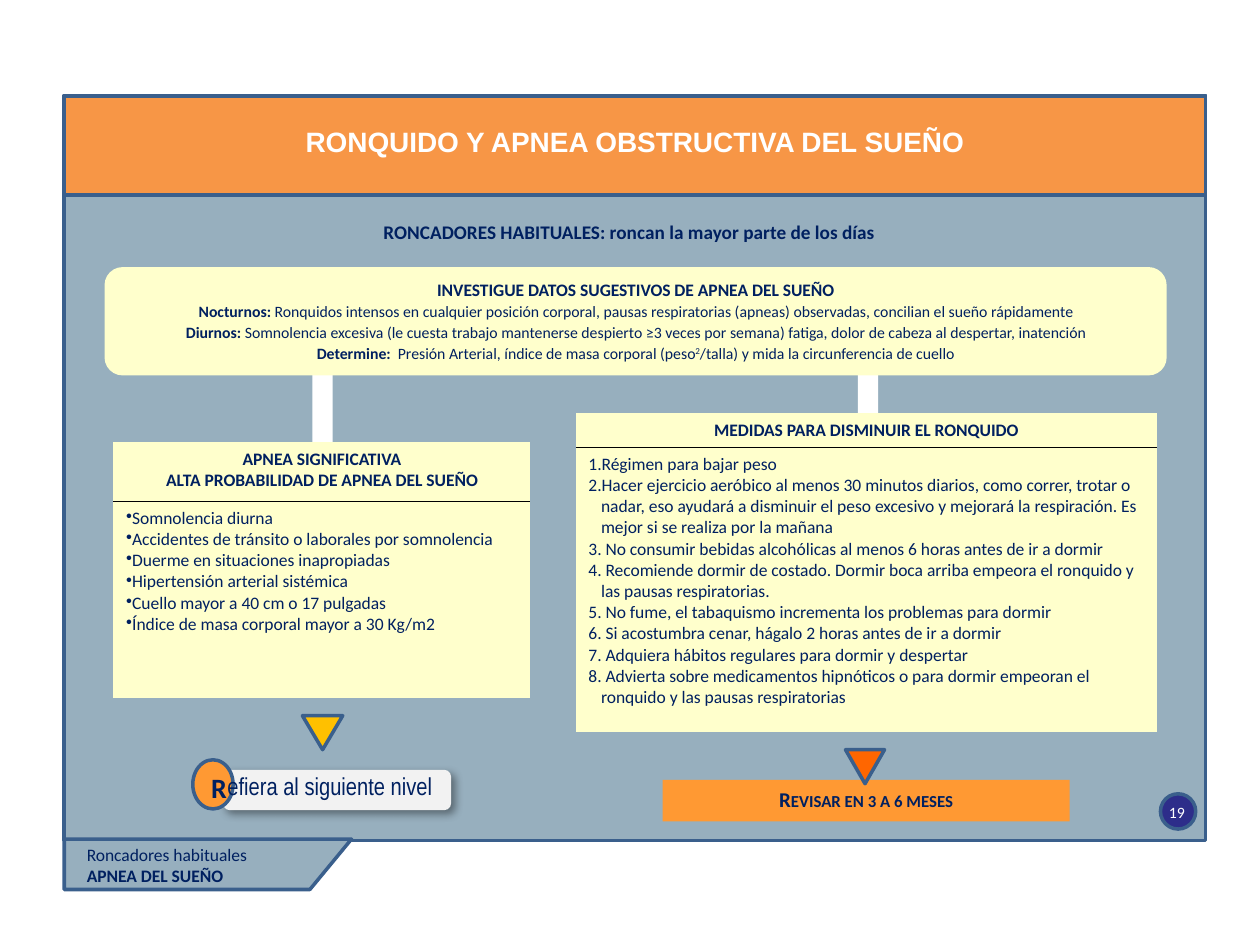
from lxml import etree
from pptx import Presentation
from pptx.dml.color import RGBColor
from pptx.enum.shapes import MSO_SHAPE
from pptx.enum.text import MSO_ANCHOR, PP_ALIGN
from pptx.oxml import parse_xml
from pptx.oxml.ns import nsdecls, qn
from pptx.util import Inches, Pt

RECTANGLE = MSO_SHAPE.RECTANGLE
ROUNDED = MSO_SHAPE.ROUNDED_RECTANGLE
OVAL = MSO_SHAPE.OVAL
TRIANGLE = MSO_SHAPE.ISOSCELES_TRIANGLE
LEFT, CENTER, RIGHT = PP_ALIGN.LEFT, PP_ALIGN.CENTER, PP_ALIGN.RIGHT
TOP, MIDDLE = MSO_ANCHOR.TOP, MSO_ANCHOR.MIDDLE

NAVY = RGBColor(0x00, 0x20, 0x60)
OUTLINE = RGBColor(0x3A, 0x5F, 0x8C)
SLATE = RGBColor(0x97, 0xAF, 0xBE)
BADGE_BLUE = RGBColor(0x2D, 0x2D, 0x8A)
TITLE_ORANGE = RGBColor(0xF7, 0x96, 0x46)
ORANGE = RGBColor(0xFF, 0x99, 0x33)
DEEP_ORANGE = RGBColor(0xFF, 0x66, 0x00)
AMBER = RGBColor(0xFF, 0xC0, 0x00)
CREAM = RGBColor(0xFF, 0xFF, 0xCC)
PALE_GRAY = RGBColor(0xF2, 0xF2, 0xF2)
WHITE = RGBColor(0xFF, 0xFF, 0xFF)

PLAIN_TABLE_STYLE = "{2D5ABB26-0587-4C30-8999-92F81FD0307C}"

SIGNS = [
    "Somnolencia diurna",
    "Accidentes de tránsito o laborales por somnolencia",
    "Duerme en situaciones inapropiadas",
    "Hipertensión arterial sistémica",
    "Cuello mayor a 40 cm o 17 pulgadas",
    "Índice de masa corporal mayor a 30 Kg/m2",
]
MEASURES = [
    "Régimen para bajar peso",
    "Hacer ejercicio aeróbico al menos 30 minutos diarios, como correr, trotar o "
    "nadar, eso ayudará a disminuir el peso excesivo y mejorará la respiración. "
    "Es mejor si se realiza por la mañana",
    " No consumir bebidas alcohólicas al menos 6 horas antes de ir a dormir",
    " Recomiende dormir de costado. Dormir boca arriba empeora el ronquido y las "
    "pausas respiratorias.",
    " No fume, el tabaquismo incrementa los problemas para dormir",
    " Si acostumbra cenar, hágalo 2 horas antes de ir a dormir",
    " Adquiera hábitos regulares para dormir y despertar",
    " Advierta sobre medicamentos hipnóticos o para dormir empeoran el ronquido y "
    "las pausas respiratorias",
]
FINDINGS = [
    ("Nocturnos:", [" Ronquidos intensos en cualquier posición corporal, pausas "
                    "respiratorias (apneas) observadas, concilian el sueño rápidamente"]),
    ("Diurnos:", [" Somnolencia excesiva (le cuesta trabajo mantenerse despierto ≥3 "
                  "veces por semana) fatiga, dolor de cabeza al despertar, inatención"]),
    ("Determine: ", [" Presión Arterial, índice de masa corporal (peso", "2",
                     "/talla) y mida la circunferencia de cuello"]),
]


def style_outline(shape, fill, outlined):
    shape.shadow.inherit = False
    shape.fill.solid()
    shape.fill.fore_color.rgb = fill
    if outlined:
        shape.line.color.rgb = OUTLINE
        shape.line.width = Pt(2)
    else:
        shape.line.fill.background()


def add_box(slide, kind, box, fill, outlined=False):
    shape = slide.shapes.add_shape(kind, *map(Inches, box))
    style_outline(shape, fill, outlined)
    return shape


def format_paragraph(paragraph, size, bold=False, align=LEFT, color=NAVY, font="Calibri"):
    paragraph.alignment = align
    paragraph.font.name = font
    paragraph.font.size = Pt(size)
    paragraph.font.bold = bold
    paragraph.font.color.rgb = color


def write_lines(frame, lines, size, anchor=TOP, **style):
    frame.vertical_anchor = anchor
    frame.text = "\n".join(lines)
    for paragraph in frame.paragraphs:
        format_paragraph(paragraph, size, **style)


def add_text(slide, box, lines, size, wrap=True, **style):
    frame = slide.shapes.add_textbox(*map(Inches, box)).text_frame
    frame.word_wrap = wrap
    write_lines(frame, lines, size, **style)
    return frame


def set_small_caps(frame):
    for run in frame.paragraphs[0].runs:
        run.font._element.set("cap", "small")


def add_soft_shadow(shape):
    effects = shape._element.spPr.find(qn("a:effectLst"))
    effects.append(parse_xml(
        f'<a:outerShdw {nsdecls("a")} blurRad="63500" dist="38100" dir="2700000">'
        '<a:srgbClr val="000000"><a:alpha val="40000"/></a:srgbClr></a:outerShdw>'))


def add_list_marker(paragraph, numbered):
    properties = paragraph._p.get_or_add_pPr()
    hanging = Inches(0.1) if numbered else 0
    properties.set("marL", str(hanging))
    properties.set("indent", str(-hanging))
    if numbered:
        etree.SubElement(properties, qn("a:buAutoNum"), type="arabicPeriod")
    else:
        etree.SubElement(properties, qn("a:buChar"), char="•")
    # Schema order puts the marker ahead of the default run properties.
    properties.append(properties.find(qn("a:defRPr")))


def add_list_table(slide, box, header_height, header, items, numbered=False):
    """Add a two-row table: centred heading, rule, marked list."""
    table = slide.shapes.add_table(2, 1, *map(Inches, box)).table
    table.first_row = table.horz_banding = False
    table._tbl.tblPr.find(qn("a:tableStyleId")).text = PLAIN_TABLE_STYLE
    table.rows[0].height = Inches(header_height)
    table.rows[1].height = Inches(box[3] - header_height)
    heading, body = table.cell(0, 0), table.cell(1, 0)
    for cell, side in ((heading, "lnB"), (body, "lnT")):
        cell.fill.solid()
        cell.fill.fore_color.rgb = CREAM
        cell._tc.tcPr.insert(0, parse_xml(
            f'<a:{side} {nsdecls("a")} w="12700"><a:solidFill>'
            f'<a:srgbClr val="000000"/></a:solidFill></a:{side}>'))
    write_lines(heading.text_frame, header, 10, bold=True, align=CENTER)
    write_lines(body.text_frame, items, 10)
    for paragraph in body.text_frame.paragraphs:
        add_list_marker(paragraph, numbered)


def add_findings(slide):
    panel = add_box(slide, ROUNDED, (0.83, 2.12, 8.43, 0.86), CREAM)
    frame = panel.text_frame
    write_lines(frame, ["INVESTIGUE DATOS SUGESTIVOS DE APNEA DEL SUEÑO"], 10,
                bold=True, align=CENTER)
    for label, parts in FINDINGS:
        paragraph = frame.add_paragraph()
        format_paragraph(paragraph, 9, align=CENTER)
        for text in [label, *parts]:
            run = paragraph.add_run()
            run.text = text
            run.font.bold = text == label
            if text == "2":
                run.font._element.set("baseline", "30000")
    for paragraph in frame.paragraphs:
        paragraph.line_spacing = Pt(12)


def add_arrowhead(slide, box, fill):
    add_box(slide, TRIANGLE, box, fill, outlined=True).rotation = 180


def add_title(slide):
    title = slide.shapes.title
    title.left, title.top, title.width, title.height = map(Inches, (0.54, 0.94, 9, 0.37))
    write_lines(title.text_frame, ["RONQUIDO Y APNEA OBSTRUCTIVA DEL SUEÑO"], 16,
                anchor=MIDDLE, bold=True, align=CENTER, color=WHITE, font="Arial")
    slide.shapes._spTree.append(title._element)  # in front of its band


def add_referral(slide):
    add_soft_shadow(add_box(slide, ROUNDED, (1.77, 6.11, 1.81, 0.32), PALE_GRAY))
    circle = add_box(slide, OVAL, (1.53, 6.03, 0.32, 0.39), ORANGE, outlined=True)
    write_lines(circle.text_frame, ["r"], 20, anchor=MIDDLE, bold=True, align=CENTER)
    set_small_caps(circle.text_frame)
    add_text(slide, (1.56, 6.07, 1.97, 0.37), ["efiera al siguiente nivel"], 14,
             align=RIGHT, font="Arial Narrow")


def add_footer_tab(slide):
    builder = slide.shapes.build_freeform(Inches(0.51), Inches(6.66))
    corners = [(2.79, 6.66), (2.46, 7.06), (0.51, 7.06)]
    builder.add_line_segments([(Inches(x), Inches(y)) for x, y in corners], close=True)
    style_outline(builder.convert_to_shape(), SLATE, outlined=True)
    frame = add_text(slide, (0.59, 6.65, 2.68, 0.45),
                     ["Roncadores habituales", "APNEA DEL SUEÑO"], 10)
    frame.paragraphs[1].font.bold = True


def main():
    presentation = Presentation()
    presentation.slide_width, presentation.slide_height = Inches(10), Inches(7.5)
    slide = presentation.slides.add_slide(presentation.slide_layouts[5])

    add_box(slide, RECTANGLE, (0.51, 0.76, 9.06, 5.91), SLATE, outlined=True)
    add_box(slide, OVAL, (9.21, 6.3, 0.28, 0.28), BADGE_BLUE, outlined=True)
    add_text(slide, (9.17, 6.32, 0.34, 0.25), ["19"], 9, wrap=False,
             align=CENTER, color=WHITE)
    add_box(slide, RECTANGLE, (0.51, 0.76, 9.06, 0.79), TITLE_ORANGE, outlined=True)
    add_title(slide)
    add_text(slide, (1.72, 1.7, 6.55, 0.29),
             ["RONCADORES HABITUALES: roncan la mayor parte de los días"], 11,
             bold=True, align=CENTER)

    for stem_left in (2.48, 6.81):
        add_box(slide, RECTANGLE, (stem_left, 2.73, 0.16, 1.02), WHITE)
    add_findings(slide)
    add_list_table(slide, (0.9, 3.51, 3.31, 2.03), 0.47,
                   ["APNEA SIGNIFICATIVA", "ALTA PROBABILIDAD DE APNEA DEL SUEÑO"], SIGNS)
    add_list_table(slide, (4.57, 3.28, 4.61, 2.53), 0.27,
                   ["MEDIDAS PARA DISMINUIR EL RONQUIDO"], MEASURES, numbered=True)

    review = add_box(slide, RECTANGLE, (5.26, 6.19, 3.23, 0.33), ORANGE)
    write_lines(review.text_frame, ["Revisar en 3 a 6 meses"], 12, bold=True, align=CENTER)
    set_small_caps(review.text_frame)
    add_arrowhead(slide, (6.71, 5.95, 0.31, 0.27), DEEP_ORANGE)
    add_arrowhead(slide, (2.4, 5.68, 0.32, 0.27), AMBER)
    add_referral(slide)
    add_footer_tab(slide)
    presentation.save("out.pptx")


if __name__ == "__main__":
    main()
